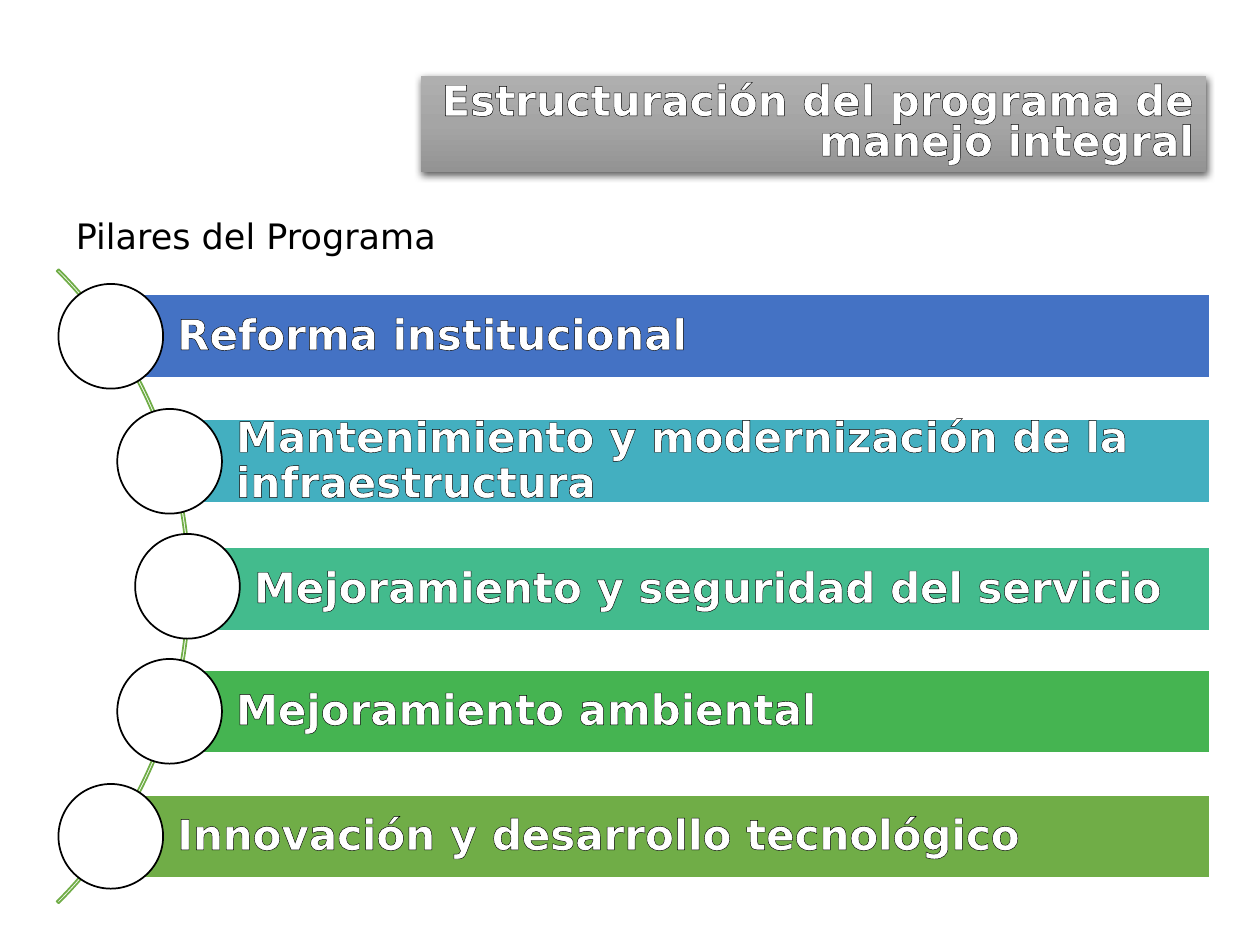
import copy
import math

import pptx
import pptx.dml.color
import pptx.enum.shapes
import pptx.enum.text
import pptx.oxml
import pptx.oxml.ns
import pptx.util

Cm = pptx.util.Cm
Pt = pptx.util.Pt
Shape = pptx.enum.shapes.MSO_SHAPE
Align = pptx.enum.text.PP_ALIGN
Anchor = pptx.enum.text.MSO_ANCHOR
qn = pptx.oxml.ns.qn
NAMESPACE = 'xmlns:a="http://schemas.openxmlformats.org/drawingml/2006/main"'

# Content
FONT = "DejaVu Sans"
TITLE = "Estructuración del programa de manejo integral"
SUBTITLE = "Pilares del Programa"
# text, bar colour, vertical shift of the bar in cm
PILLARS = [
    ("Reforma institucional", "4472C4", 0),
    ("Mantenimiento y modernización de la infraestructura", "43AFC0", 0),
    ("Mejoramiento y seguridad del servicio", "43BB8D", 0.06),
    ("Mejoramiento ambiental", "45B451", 0),
    ("Innovación y desarrollo tecnológico", "70AD47", 0),
]
TITLE_GRADIENT = [(0, "AFAFAF"), (0.5, "A5A5A5"), (1, "939393")]

# Layout in cm: the circles sit on an arc around a centre left of the slide
CENTRE_X, CENTRE_Y = -5.21, 11.82
ARC_SIZE, CIRCLE_TRACK = 18.08, 8.99
PITCH, BAR_HEIGHT, CIRCLE_SIZE, RIGHT_EDGE = 2.52, 1.68, 2.11, 24.39


def colour(value):
    return pptx.dml.color.RGBColor.from_string(value)


def add_shape(slide, kind, left, top, width, height, fill=None, line=None):
    shape = slide.shapes.add_shape(kind, Cm(left), Cm(top), Cm(width), Cm(height))
    shape.shadow.inherit = False
    if fill:
        shape.fill.solid()
        shape.fill.fore_color.rgb = colour(fill)
    else:
        shape.fill.background()
    if line:
        shape.line.color.rgb = colour(line)
        shape.line.width = Pt(1)
    else:
        shape.line.fill.background()
    return shape


def write_text(shape, text, size=24, color="FFFFFF", bold=True, outlined=True,
               align=Align.LEFT, anchor=Anchor.MIDDLE, spacing=None, insets=None):
    frame = shape.text_frame
    frame.word_wrap = True
    frame.vertical_anchor = anchor
    if insets:
        (frame.margin_left, frame.margin_top,
         frame.margin_right, frame.margin_bottom) = map(Cm, insets)
    paragraph = frame.paragraphs[0]
    paragraph.alignment = align
    paragraph.line_spacing = spacing
    run = paragraph.add_run()
    run.text = text
    run.font.name = FONT
    run.font.size = Pt(size)
    run.font.bold = bold
    run.font.color.rgb = colour(color)
    if outlined:
        run.font._element.insert(0, pptx.oxml.parse_xml(
            f'<a:ln {NAMESPACE} w="{Pt(0.8)}"><a:solidFill>'
            '<a:srgbClr val="000000"/></a:solidFill></a:ln>'))


def add_gradient(shape, stops):
    shape.fill.gradient()
    shape.fill.gradient_angle = 270
    stop_list = shape._element.spPr.find(".//" + qn("a:gsLst"))
    stop_list.append(copy.deepcopy(stop_list[-1]))
    for stop, (position, value) in zip(shape.fill.gradient_stops, stops):
        stop.position = position
        stop.color.rgb = colour(value)


def add_shadow(shape):
    shape._element.spPr.find(qn("a:effectLst")).append(pptx.oxml.parse_xml(
        f'<a:outerShdw {NAMESPACE} blurRad="{Pt(4.5)}" dist="{Pt(1.5)}" '
        'dir="5400000" algn="ctr" rotWithShape="0"><a:srgbClr val="000000">'
        '<a:alpha val="63000"/></a:srgbClr></a:outerShdw>'))


presentation = pptx.Presentation()
presentation.slide_width, presentation.slide_height = Cm(25.4), Cm(19.05)
slide = presentation.slides.add_slide(presentation.slide_layouts[6])

# Title banner
banner = add_shape(slide, Shape.RECTANGLE, 8.49, 1.53, 15.83, 1.94)
add_gradient(banner, TITLE_GRADIENT)
add_shadow(banner)
write_text(banner, TITLE, align=Align.RIGHT, spacing=0.8)

# Arc behind the pillars, from -45 to 45 degrees
arc = add_shape(slide, Shape.BLOCK_ARC, CENTRE_X - ARC_SIZE / 2,
                CENTRE_Y - ARC_SIZE / 2, ARC_SIZE, ARC_SIZE, line="70AD47")
for index, value in enumerate((189, 27, 0.003)):
    arc.adjustments[index] = value

# Pillars: a bar that starts at the middle of its circle
for row, (text, fill, shift) in enumerate(PILLARS):
    offset = (row - (len(PILLARS) - 1) / 2) * PITCH
    x = CENTRE_X + math.sqrt(CIRCLE_TRACK ** 2 - offset ** 2)
    y = CENTRE_Y + offset
    bar = add_shape(slide, Shape.RECTANGLE, x, y - BAR_HEIGHT / 2 + shift,
                    RIGHT_EDGE - x, BAR_HEIGHT, fill=fill, line="FFFFFF")
    write_text(bar, text, spacing=0.9, insets=(1.34, 0.17, 0.17, 0.17))
    add_shape(slide, Shape.OVAL, x - CIRCLE_SIZE / 2, y - CIRCLE_SIZE / 2,
              CIRCLE_SIZE, CIRCLE_SIZE, fill="FFFFFF", line="000000")

# Subtitle
subtitle = slide.shapes.add_textbox(Cm(1.28), Cm(4.19), Cm(21.26), Cm(1.11))
write_text(subtitle, SUBTITLE, size=20, color="000000", bold=False,
           outlined=False, anchor=Anchor.TOP)

presentation.save("out.pptx")
